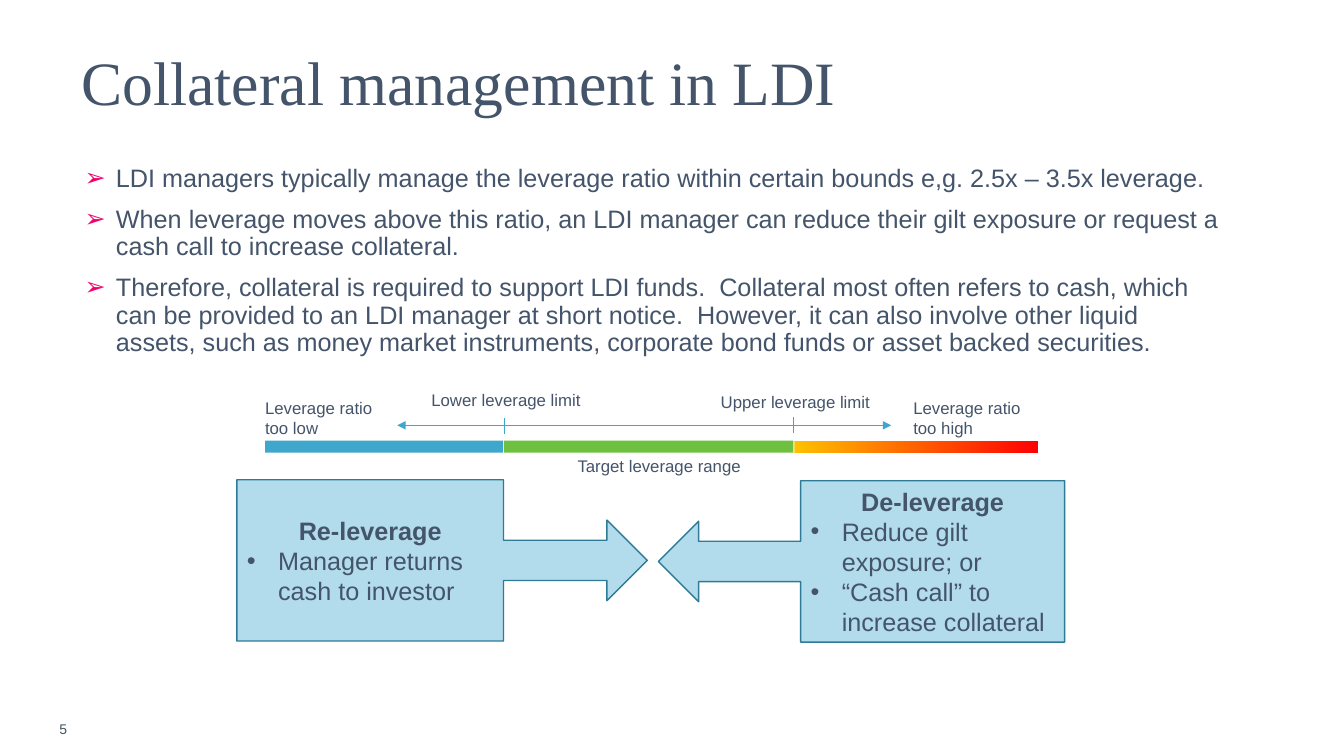
from dataclasses import dataclass
from typing import Optional

from lxml import etree
from pptx import Presentation
from pptx.dml.color import RGBColor
from pptx.enum.shapes import MSO_CONNECTOR, MSO_SHAPE
from pptx.enum.text import MSO_ANCHOR, MSO_AUTO_SIZE, PP_ALIGN
from pptx.oxml.ns import qn
from pptx.util import Inches, Pt

LEFT, CENTER = PP_ALIGN.LEFT, PP_ALIGN.CENTER
TOP, MIDDLE = MSO_ANCHOR.TOP, MSO_ANCHOR.MIDDLE
RECTANGLE = MSO_SHAPE.RECTANGLE
RIGHT_CALLOUT = MSO_SHAPE.RIGHT_ARROW_CALLOUT
LEFT_CALLOUT = MSO_SHAPE.LEFT_ARROW_CALLOUT
STRAIGHT = MSO_CONNECTOR.STRAIGHT
NO_AUTOFIT = MSO_AUTO_SIZE.NONE


@dataclass(frozen=True)
class Theme:
    text: str = "44546A"
    page_number: str = "455560"
    bullet: str = "F2016C"
    low: str = "3FA6CC"
    target: str = "6EC040"
    warning: str = "FFC000"
    danger: str = "FF0000"
    callout: str = "B2DBEB"
    callout_line: str = "2F7B97"
    heading_font: str = "Times New Roman"
    body_font: str = "Arial"
    title_size: int = 44
    body_size: int = 18
    label_size: int = 12
    page_size: int = 10


@dataclass(frozen=True)
class Label:
    text: str
    left: float
    top: float
    width: float
    height: float
    wrap: bool = True


@dataclass(frozen=True)
class Bar:
    left: float
    width: float
    color: str
    end_color: Optional[str] = None


@dataclass(frozen=True)
class Callout:
    kind: int
    left: float
    top: float
    width: float
    heading: str
    actions: tuple[str, ...]


@dataclass(frozen=True)
class Line:
    start_x: float
    start_y: float
    end_x: float
    end_y: float
    arrows: bool = False


THEME = Theme()
BAR_TOP, BAR_HEIGHT = 4.37, 0.12
CALLOUT_HEIGHT = 1.6
INDENT = 0.31

POINTS = (
    "LDI managers typically manage the leverage ratio within certain bounds e,g. 2.5x – 3.5x leverage.",
    "When leverage moves above this ratio, an LDI manager can reduce their gilt exposure or request a "
    "cash call to increase collateral.",
    "Therefore, collateral is required to support LDI funds.  Collateral most often refers to cash, which "
    "can be provided to an LDI manager at short notice.  However, it can also involve other liquid assets, "
    "such as money market instruments, corporate bond funds or asset backed securities.",
)
LINES = (
    Line(3.94, 4.22, 8.84, 4.22, arrows=True),
    Line(5, 4.15, 5, 4.31),
    Line(7.87, 4.14, 7.87, 4.3),
)
LABELS = (
    Label("Lower leverage limit", 4.18, 3.82, 1.7, 0.3),
    Label("Upper leverage limit", 7.05, 3.84, 1.7, 0.3),
    Label("Leverage ratio too low", 2.53, 3.9, 1.29, 0.5),
    Label("Leverage ratio too high", 8.96, 3.9, 1.34, 0.5),
    Label("Target leverage range", 5.63, 4.47, 1.83, 0.3, wrap=False),
)
BARS = (
    Bar(2.63, 2.36, THEME.low),
    Bar(5, 2.87, THEME.target),
    Bar(7.88, 2.42, THEME.warning, THEME.danger),
)
CALLOUTS = (
    Callout(LEFT_CALLOUT, 6.53, 4.77, 4.03, "De-leverage",
            ("Reduce gilt exposure; or", "“Cash call” to increase collateral")),
    Callout(RIGHT_CALLOUT, 2.35, 4.76, 4.07, "Re-leverage",
            ("Manager returns cash to investor",)),
)


def rgb(color: str) -> RGBColor:
    return RGBColor.from_string(color)


def set_bullet(paragraph, character: str, color: str) -> None:
    properties = paragraph._p.get_or_add_pPr()
    properties.set("marL", str(Inches(INDENT)))
    properties.set("indent", str(-Inches(INDENT)))
    bullet_color = etree.SubElement(properties, qn("a:buClr"))
    etree.SubElement(bullet_color, qn("a:srgbClr"), val=color)
    etree.SubElement(properties, qn("a:buFont"), typeface=THEME.body_font)
    etree.SubElement(properties, qn("a:buChar"), char=character)


def write(frame, text: str, *, size: int = THEME.body_size, font: str = THEME.body_font,
          color: str = THEME.text, bold: bool = False, align=LEFT, spacing: float = 1.0,
          before: int = 0, bullet: str = "", bullet_color: str = THEME.text) -> None:
    paragraph = frame.paragraphs[0]
    if paragraph.runs:
        paragraph = frame.add_paragraph()
    else:
        before = 0
    if bullet:
        set_bullet(paragraph, bullet, bullet_color)
    paragraph.alignment = align
    paragraph.line_spacing = spacing
    paragraph.space_before = Pt(before)
    run = paragraph.add_run()
    run.text = text
    run.font.name = font
    run.font.size = Pt(size)
    run.font.bold = bold
    run.font.color.rgb = rgb(color)


def prepare_frame(shape, anchor, wrap: bool = True):
    frame = shape.text_frame
    frame.auto_size = NO_AUTOFIT
    frame.word_wrap = wrap
    frame.vertical_anchor = anchor
    return frame


def place(shape, left: float, top: float, width: float, height: float) -> None:
    shape.left, shape.top = Inches(left), Inches(top)
    shape.width, shape.height = Inches(width), Inches(height)


def add_label(slide, label: Label, anchor=TOP, **text_format) -> None:
    box = slide.shapes.add_textbox(Inches(label.left), Inches(label.top),
                                   Inches(label.width), Inches(label.height))
    write(prepare_frame(box, anchor, label.wrap), label.text, **text_format)


def add_line(slide, line: Line) -> None:
    connector = slide.shapes.add_connector(STRAIGHT, Inches(line.start_x), Inches(line.start_y),
                                           Inches(line.end_x), Inches(line.end_y))
    connector.line.color.rgb = rgb(THEME.low)
    connector.line.width = Pt(0.5)
    if line.arrows:
        outline = connector.line._get_or_add_ln()
        for end in ("a:headEnd", "a:tailEnd"):
            etree.SubElement(outline, qn(end), type="triangle")
    etree.SubElement(connector._element.spPr, qn("a:effectLst"))


def add_bar(slide, bar: Bar) -> None:
    shape = slide.shapes.add_shape(RECTANGLE, Inches(bar.left), Inches(BAR_TOP),
                                   Inches(bar.width), Inches(BAR_HEIGHT))
    shape.shadow.inherit = False
    shape.line.fill.background()
    if bar.end_color:
        shape.fill.gradient()
        shape.fill.gradient_angle = 0
        for stop, color in zip(shape.fill.gradient_stops, (bar.color, bar.end_color)):
            stop.color.rgb = rgb(color)
    else:
        shape.fill.solid()
        shape.fill.fore_color.rgb = rgb(bar.color)


def add_callout(slide, callout: Callout) -> None:
    shape = slide.shapes.add_shape(callout.kind, Inches(callout.left), Inches(callout.top),
                                   Inches(callout.width), Inches(CALLOUT_HEIGHT))
    shape.shadow.inherit = False
    shape.fill.solid()
    shape.fill.fore_color.rgb = rgb(THEME.callout)
    shape.line.color.rgb = rgb(THEME.callout_line)
    shape.line.width = Pt(1)
    frame = prepare_frame(shape, MIDDLE)
    write(frame, callout.heading, bold=True, align=CENTER)
    for action in callout.actions:
        write(frame, action, bullet="•")


def main() -> None:
    presentation = Presentation()
    presentation.slide_width, presentation.slide_height = Inches(13.33), Inches(7.5)
    slide = presentation.slides.add_slide(presentation.slide_layouts[1])
    title, body = slide.placeholders
    place(title, 0.71, 0.12, 11.5, 1.45)
    write(prepare_frame(title, MIDDLE), "Collateral management in LDI",
          size=THEME.title_size, font=THEME.heading_font, spacing=0.9)
    place(body, 0.74, 1.59, 11.47, 2.25)
    body_frame = prepare_frame(body, TOP)
    for point in POINTS:
        write(body_frame, point, spacing=0.9, before=10, bullet="➢", bullet_color=THEME.bullet)
    add_label(slide, Label("5", 0.49, 7.03, 2.25, 0.4), MIDDLE,
              size=THEME.page_size, color=THEME.page_number)
    for line in LINES:
        add_line(slide, line)
    for label in LABELS:
        add_label(slide, label, size=THEME.label_size)
    for bar in BARS:
        add_bar(slide, bar)
    for callout in CALLOUTS:
        add_callout(slide, callout)
    presentation.save("out.pptx")


if __name__ == "__main__":
    main()
